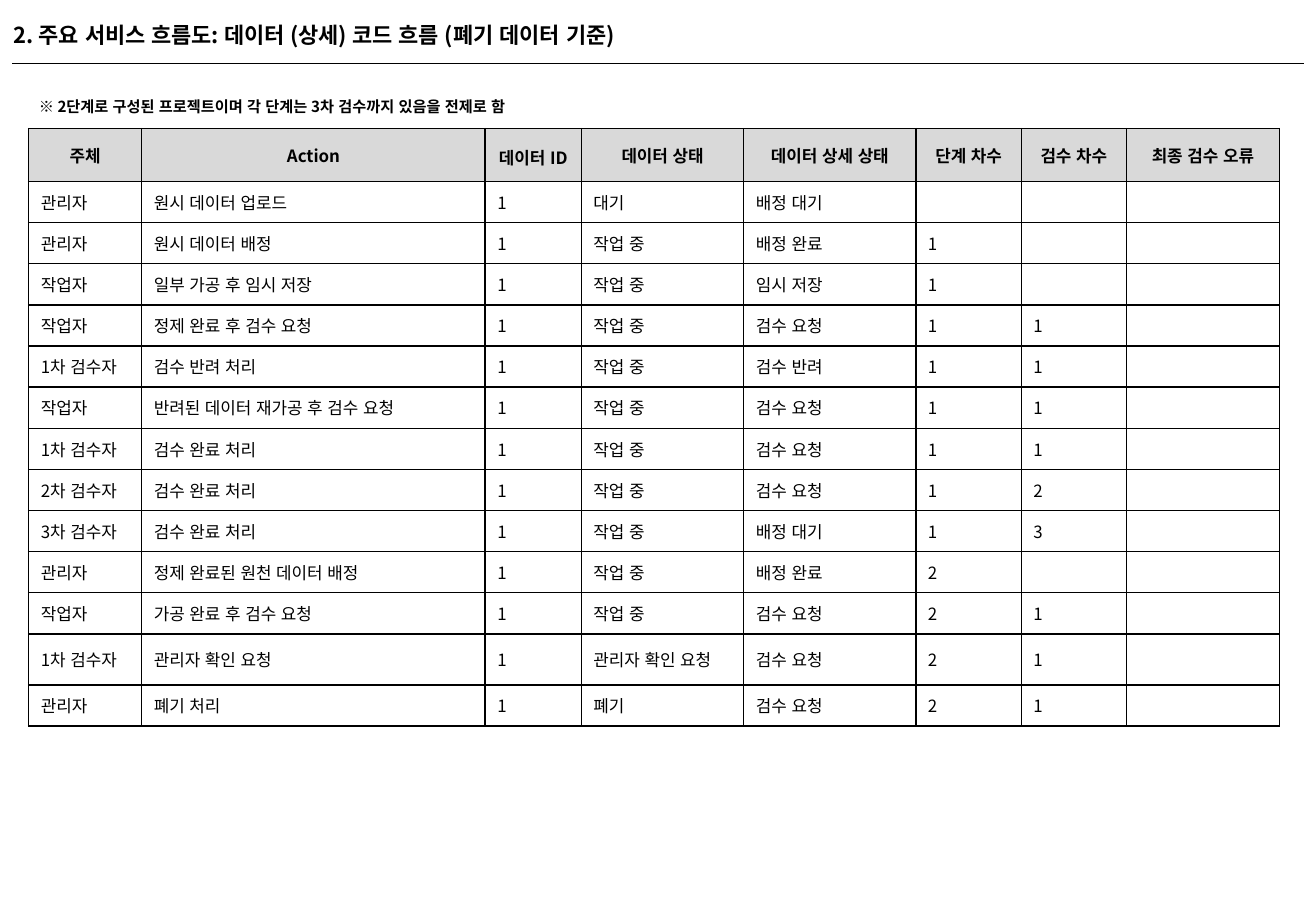
from lxml.etree import SubElement
from pptx import Presentation
from pptx.dml.color import RGBColor
from pptx.enum.lang import MSO_LANGUAGE_ID
from pptx.enum.shapes import MSO_CONNECTOR
from pptx.enum.text import MSO_ANCHOR, PP_ALIGN
from pptx.oxml.ns import qn
from pptx.util import Pt

TITLE = "2. 주요 서비스 흐름도: 데이터 (상세) 코드 흐름 (폐기 데이터 기준)"
PREMISE = "※ 2단계로 구성된 프로젝트이며 각 단계는 3차 검수까지 있음을 전제로 함"
HEADINGS = ("주체", "Action", "데이터 ID", "데이터 상태", "데이터 상세 상태",
            "단계 차수", "검수 차수", "최종 검수 오류")
DATA_ID = "1"
FINAL_ERROR = ""
STEPS = [
    ("관리자", "원시 데이터 업로드", "대기", "배정 대기", "", ""),
    ("관리자", "원시 데이터 배정", "작업 중", "배정 완료", "1", ""),
    ("작업자", "일부 가공 후 임시 저장", "작업 중", "임시 저장", "1", ""),
    ("작업자", "정제 완료 후 검수 요청", "작업 중", "검수 요청", "1", "1"),
    ("1차 검수자", "검수 반려 처리", "작업 중", "검수 반려", "1", "1"),
    ("작업자", "반려된 데이터 재가공 후 검수 요청", "작업 중", "검수 요청", "1", "1"),
    ("1차 검수자", "검수 완료 처리", "작업 중", "검수 요청", "1", "1"),
    ("2차 검수자", "검수 완료 처리", "작업 중", "검수 요청", "1", "2"),
    ("3차 검수자", "검수 완료 처리", "작업 중", "배정 대기", "1", "3"),
    ("관리자", "정제 완료된 원천 데이터 배정", "작업 중", "배정 완료", "2", ""),
    ("작업자", "가공 완료 후 검수 요청", "작업 중", "검수 요청", "2", "1"),
    ("1차 검수자", "관리자 확인 요청", "관리자 확인 요청", "검수 요청", "2", "1"),
    ("관리자", "폐기 처리", "폐기", "검수 요청", "2", "1"),
]
COLUMN_WIDTHS = (67, 203.6, 57, 96.3, 102, 62.5, 62.3, 90.7)
ROW_HEIGHT = 24.4
SPECIAL_ROW_HEIGHTS = {0: 31.4, 12: 30.2}
FONT = "Noto Sans CJK KR"
COLORS = {"ink": "000000", "heading": "D9D9D9"}


def add_text(paragraph, text, size, bold=False):
    run = paragraph.add_run()
    run.text = text
    run.font.name = FONT
    run.font.size = Pt(size)
    run.font.bold = bold
    run.font.language_id = MSO_LANGUAGE_ID.KOREAN
    run.font.color.rgb = RGBColor.from_string(COLORS["ink"])
    SubElement(run.font._element, qn("a:ea"), typeface=FONT)


def add_borders(cell):
    properties = cell._tc.get_or_add_tcPr()
    for position, side in enumerate(("a:lnL", "a:lnR", "a:lnT", "a:lnB")):
        border = properties.makeelement(qn(side), {"w": str(Pt(1))})
        fill = SubElement(border, qn("a:solidFill"))
        SubElement(fill, qn("a:srgbClr"), val=COLORS["ink"])
        properties.insert(position, border)


def fill_cell(cell, text, is_heading):
    cell.vertical_anchor = MSO_ANCHOR.MIDDLE
    paragraph = cell.text_frame.paragraphs[0]
    if is_heading:
        cell.fill.solid()
        cell.fill.fore_color.rgb = RGBColor.from_string(COLORS["heading"])
        paragraph.alignment = PP_ALIGN.CENTER
    else:
        cell.fill.background()
    if text:
        add_text(paragraph, text, 10, is_heading)
    else:
        SubElement(paragraph._p, qn("a:endParaRPr"), sz="1000")
    add_borders(cell)


def main():
    presentation = Presentation()
    presentation.slide_width, presentation.slide_height = Pt(780), Pt(540)
    slide = presentation.slides.add_slide(presentation.slide_layouts[5])

    title = slide.shapes.title
    title.left, title.top, title.width, title.height = Pt(1), Pt(9), Pt(757.5), Pt(23)
    title.text_frame.vertical_anchor = MSO_ANCHOR.MIDDLE
    heading = title.text_frame.paragraphs[0]
    heading.alignment = PP_ALIGN.LEFT
    add_text(heading, TITLE, 13, True)

    rule = slide.shapes.add_connector(MSO_CONNECTOR.STRAIGHT, Pt(7.2), Pt(37.5), Pt(773), Pt(37.5))
    rule.line.color.rgb = RGBColor.from_string(COLORS["ink"])
    rule.line.width = Pt(0.75)
    SubElement(rule._element.spPr, qn("a:effectLst"))

    rows = [HEADINGS] + [
        (actor, action, DATA_ID, state, detail, stage, review, FINAL_ERROR)
        for actor, action, state, detail, stage, review in STEPS
    ]
    flow = slide.shapes.add_table(
        len(rows), len(HEADINGS), Pt(17), Pt(76.2), Pt(742), Pt(354)).table
    flow.first_row = flow.horz_banding = False
    for column, width in zip(flow.columns, COLUMN_WIDTHS):
        column.width = Pt(width)
    for r, values in enumerate(rows):
        flow.rows[r].height = Pt(SPECIAL_ROW_HEIGHTS.get(r, ROW_HEIGHT))
        for c, value in enumerate(values):
            fill_cell(flow.cell(r, c), value, r == 0)
    id_heading = flow.cell(0, HEADINGS.index("데이터 ID"))
    id_heading.margin_top, id_heading.margin_bottom = Pt(2.5), Pt(0)

    premise = slide.shapes.add_textbox(Pt(16), Pt(49), Pt(318), Pt(21.6)).text_frame
    premise.word_wrap = False
    premise.paragraphs[0].line_spacing = 1.5
    add_text(premise.paragraphs[0], PREMISE, 9, True)

    presentation.save("out.pptx")


if __name__ == "__main__":
    main()
